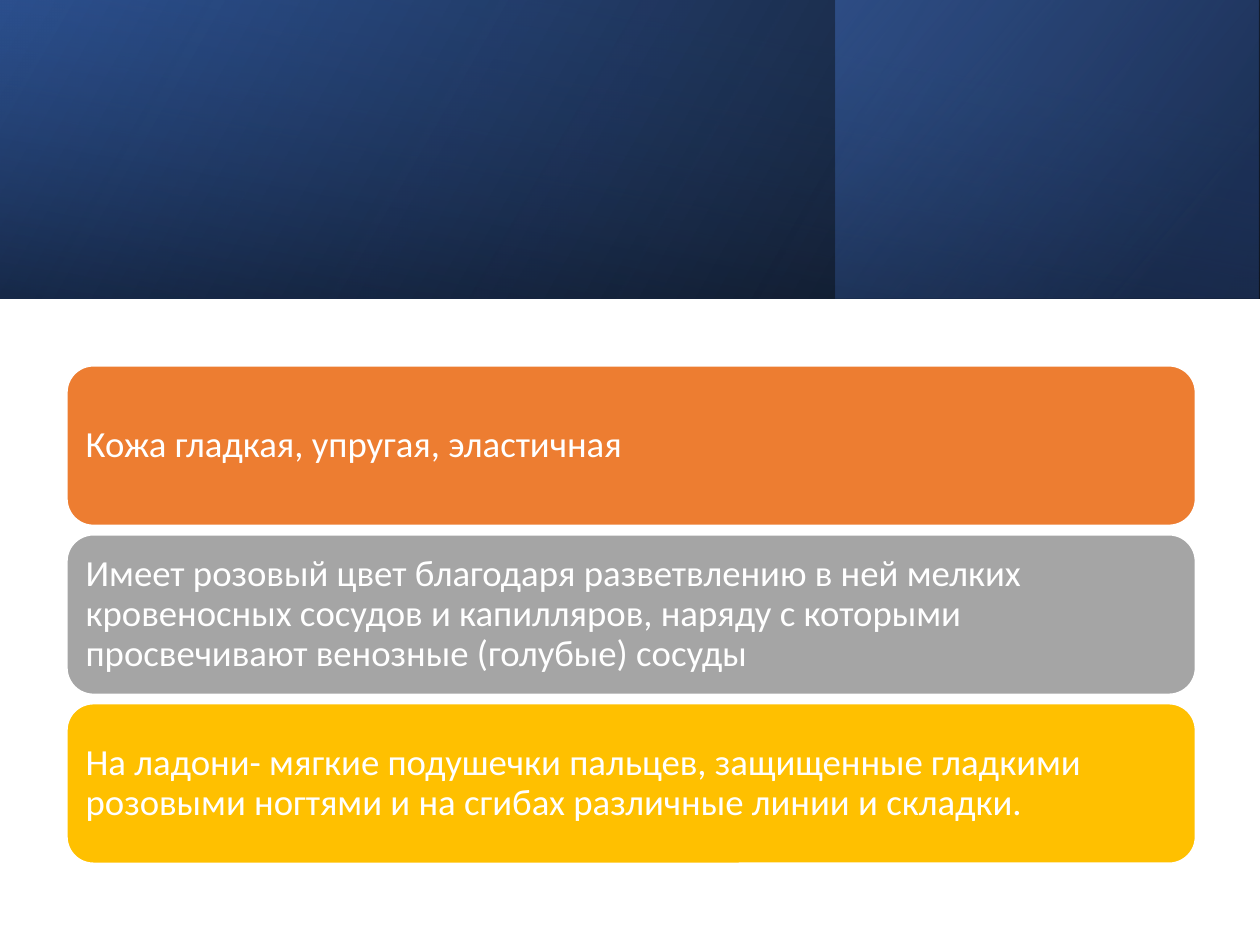
from lxml import etree
from pptx import Presentation
from pptx.dml.color import RGBColor
from pptx.enum.shapes import MSO_SHAPE
from pptx.enum.text import MSO_ANCHOR, PP_ALIGN
from pptx.oxml.ns import qn
from pptx.util import Pt

RECTANGLE = MSO_SHAPE.RECTANGLE
ROUNDED = MSO_SHAPE.ROUNDED_RECTANGLE
MIDDLE = MSO_ANCHOR.MIDDLE
LEFT = PP_ALIGN.LEFT

COLORS = {
    "black": "000000",
    "white": "FFFFFF",
    "navy": "203864",
    "deep_blue": "2F5597",
    "blue": "4472C4",
    "orange": "ED7D31",
    "gray": "A5A5A5",
    "gold": "FFC000",
}

SKIN_FACTS = [
    ("orange", "Кожа гладкая, упругая, эластичная"),
    ("gray", "Имеет розовый цвет благодаря разветвлению в ней мелких кровеносных "
             "сосудов и капилляров, наряду с которыми просвечивают венозные (голубые) сосуды"),
    ("gold", "На ладони- мягкие подушечки пальцев, защищенные гладкими розовыми "
             "ногтями и на сгибах различные линии и складки."),
]


def rgb(name):
    """Return the named palette colour."""
    return RGBColor.from_string(COLORS[name])


def add_shape(slide, kind, left, top, width, height):
    """Add a shadowless preset shape, placed in points."""
    shape = slide.shapes.add_shape(kind, Pt(left), Pt(top), Pt(width), Pt(height))
    shape.shadow.inherit = False
    return shape


def add_gradient_panel(slide, box, angle, stops, rotation=0):
    """Add a mirrored panel with stops of position, colour and opacity in percent."""
    panel = add_shape(slide, RECTANGLE, *box)
    panel.rotation = rotation
    panel.line.fill.background()
    panel.fill.gradient()
    panel.fill.gradient_angle = 360 - angle
    for stop, (position, color, _) in zip(panel.fill.gradient_stops, stops):
        stop.position = position / 100
        stop.color.rgb = rgb(color)
    properties = panel._element.spPr
    properties.find(qn("a:xfrm")).set("flipH", "1")
    stop_colors = properties.find(qn("a:gradFill")).iter(qn("a:srgbClr"))
    for stop_color, (_, _, opacity) in zip(stop_colors, stops):
        etree.SubElement(stop_color, qn("a:alpha")).set("val", str(opacity * 1000))


def add_banner(slide, left, top, width, height):
    """Layer three gradients into the blue banner."""
    accent_width = 242
    add_gradient_panel(slide, (left, top, width, height), 330,
                       [(0, "black", 96), (100, "deep_blue", 100)])
    add_gradient_panel(slide, (left + width - accent_width - 0.6, top, accent_width, height), 320,
                       [(19, "navy", 68), (100, "blue", 48)])
    turn = (width - height) / 2
    add_gradient_panel(slide, (left + turn, top - turn, height, width), 350,
                       [(23, "deep_blue", 16), (99, "black", 45)], rotation=270)


def add_fact_card(slide, box, color, fact):
    """Add one rounded card holding a fact."""
    card = add_shape(slide, ROUNDED, *box)
    card.fill.solid()
    card.fill.fore_color.rgb = rgb(color)
    card.line.color.rgb = rgb("white")
    card.line.width = Pt(1)
    frame = card.text_frame
    frame.word_wrap = True
    frame.vertical_anchor = MIDDLE
    frame.margin_left = frame.margin_right = Pt(6.3)
    frame.margin_top = frame.margin_bottom = Pt(6.3)
    paragraph = frame.paragraphs[0]
    paragraph.text = fact
    paragraph.alignment = LEFT
    paragraph.line_spacing = 0.9
    font = paragraph.runs[0].font
    font.name = "Calibri"
    font.size = Pt(21)
    font.color.rgb = rgb("white")


def add_fact_list(slide, left, top, width, height, gap=5.2):
    """Stack the fact cards evenly in the given box."""
    card_height = (height - gap * (len(SKIN_FACTS) - 1)) / len(SKIN_FACTS)
    for index, (color, fact) in enumerate(SKIN_FACTS):
        card_top = top + index * (card_height + gap)
        add_fact_card(slide, (left, card_top, width, card_height), color, fact)


def main():
    """Build and save the slide."""
    presentation = Presentation()
    presentation.slide_width = Pt(720)
    presentation.slide_height = Pt(540)
    slide = presentation.slides.add_slide(presentation.slide_layouts[6])
    add_banner(slide, 0, 0, 720, 170.6)
    add_fact_list(slide, 38.2, 209, 645, 284.4)
    presentation.save("out.pptx")


if __name__ == "__main__":
    main()
